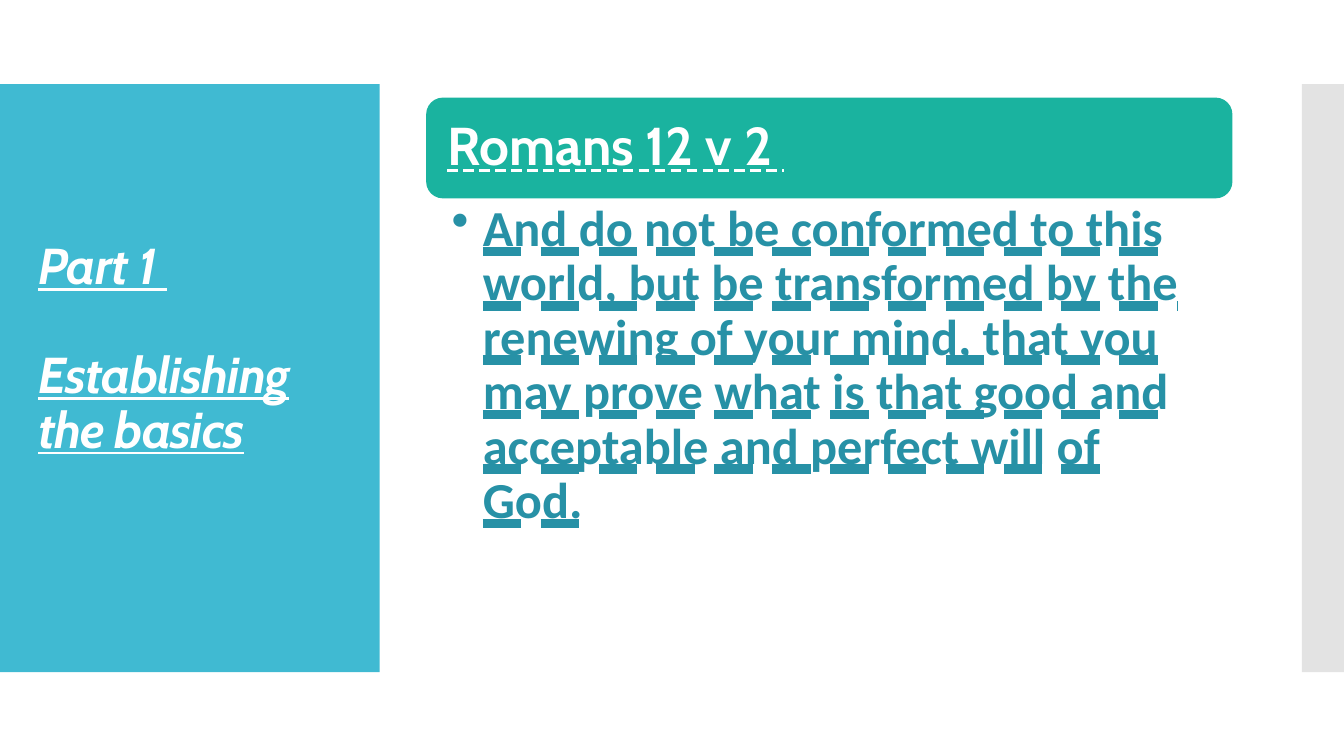
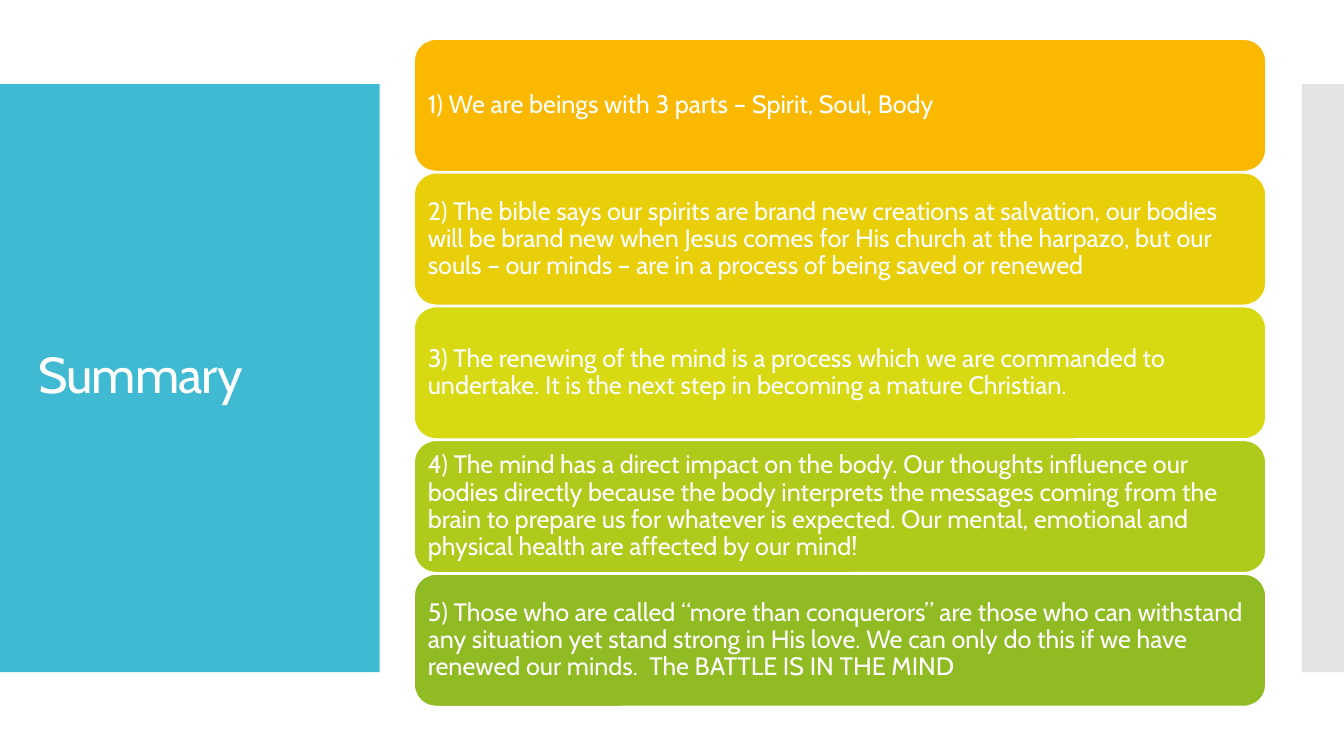
from lxml import etree
from pptx import Presentation
from pptx.dml.color import RGBColor
from pptx.enum import shapes, text
from pptx.oxml.ns import qn
from pptx.util import Cm, Pt

WHITE = RGBColor(0xFF, 0xFF, 0xFF)
SKY = RGBColor(0x40, 0xBA, 0xD2)
GREY = RGBColor(0xE3, 0xE3, 0xE3)
TEAL = RGBColor(0x1A, 0xB3, 0x9F)
DEEP_BLUE = RGBColor(0x27, 0x91, 0xA6)
AMBER = RGBColor(0xFA, 0xB9, 0x00)
GOLD = RGBColor(0xE9, 0xCE, 0x0A)
LEMON = RGBColor(0xD7, 0xD9, 0x13)
LIME = RGBColor(0xB0, 0xCA, 0x1B)
GREEN = RGBColor(0x90, 0xBB, 0x23)

SUMMARY = [
    (AMBER, "1) We are beings with 3 parts – Spirit, Soul, Body"),
    (GOLD, "2) The bible says our spirits are brand new creations at salvation, "
           "our bodies will be brand new when Jesus comes for His church at the "
           "harpazo, but our souls – our minds – are in a process of being saved "
           "or renewed"),
    (LEMON, "3) The renewing of the mind is a process which we are commanded to "
            "undertake. It is the next step in becoming a mature Christian."),
    (LIME, "4) The mind has a direct impact on the body. Our thoughts influence "
           "our bodies directly because the body interprets the messages coming "
           "from the brain to prepare us for whatever is expected. Our mental, "
           "emotional and physical health are affected by our mind!"),
    (GREEN, "5) Those who are called “more than conquerors” are those who can "
            "withstand any situation yet stand strong in His love. We can only do "
            "this if we have renewed our minds.  The BATTLE IS IN THE MIND"),
]
VERSE = ("And do not be conformed to this world, but be transformed by the renewing "
         "of your mind, that you may prove what is that good and acceptable and "
         "perfect will of God.")


class Deck:
    """Holds the shared style and the current slide."""

    base_font = {"name": "Cabin", "size": Pt(36)}
    band_top, band_height = 2.12, 14.82

    def __init__(self):
        self.deck = Presentation()
        self.deck.slide_width, self.deck.slide_height = Cm(33.87), Cm(19.05)
        self.page = None

    def add_page(self):
        self.page = self.deck.slides.add_slide(self.deck.slide_layouts[6])
        for left, width, color in ((0, 9.57, SKY), (32.81, 1.06, GREY)):
            self.panel(shapes.MSO_SHAPE.RECTANGLE,
                       (left, self.band_top, width, self.band_height), color)

    def panel(self, kind, area, color):
        shape = self.page.shapes.add_shape(kind, *map(Cm, area))
        shape.shadow.inherit = False
        shape.fill.solid()
        shape.fill.fore_color.rgb = color
        shape.line.fill.background()
        return shape

    def fill_text(self, shape, lines, color=WHITE, insets=None,
                  anchor=text.MSO_ANCHOR.MIDDLE, gap=0, spacing=None, **font):
        """Fill a shape with paragraphs; insets are left, top, right, bottom in cm."""
        frame = shape.text_frame
        frame.word_wrap = True
        frame.vertical_anchor = anchor
        if insets:
            for side, inset in zip(("left", "top", "right", "bottom"), insets):
                setattr(frame, f"margin_{side}", Cm(inset))
        for index, line in enumerate(lines):
            para = frame.add_paragraph() if index else frame.paragraphs[0]
            para.alignment = text.PP_ALIGN.LEFT
            para.line_spacing = 0.9
            para.space_before = Pt(gap if index else 0)
            span = para.add_run()
            span.text = line
            for key, value in {**self.base_font, **font}.items():
                setattr(span.font, key, value)
            span.font.color.rgb = color
            if spacing:
                span._r.get_or_add_rPr().set("spc", str(spacing))

    def title(self, lines, top=3.12, **font):
        box = self.page.shapes.add_textbox(Cm(0.71), Cm(top), Cm(8.18), Cm(12.78))
        self.fill_text(box, lines, gap=39, spacing=-60, **font)

    def card(self, area, color, line, inset, **font):
        shape = self.panel(shapes.MSO_SHAPE.ROUNDED_RECTANGLE, area, color)
        self.fill_text(shape, [line], insets=[inset] * 4, **font)
        return shape

    def bullet(self, area, line, **font):
        box = self.page.shapes.add_textbox(*map(Cm, area))
        self.fill_text(box, [line], insets=(0.64, 0.13, 0.71, 0.13),
                       anchor=text.MSO_ANCHOR.TOP, **font)
        props = box.text_frame.paragraphs[0]._p.get_or_add_pPr()
        props.set("marL", str(Cm(0.79)))
        props.set("indent", str(-Cm(0.79)))
        etree.SubElement(props, qn("a:buChar")).set("char", "•")


def verse_page(deck):
    deck.add_page()
    deck.title(["Part 1 ", "Establishing the basics"], top=2.43,
               bold=True, italic=True, underline=True)
    deck.card((10.74, 2.46, 20.32, 2.54), TEAL, "Romans 12 v 2 ", 0.41,
              size=Pt(38), bold=True, underline=text.MSO_UNDERLINE.DASH_LINE)
    deck.bullet((10.74, 4.98, 20.32, 11.58), VERSE, color=DEEP_BLUE, name="Calibri",
                bold=True, underline=text.MSO_UNDERLINE.DASH_HEAVY_LINE)


def summary_page(deck):
    top, height, pitch = 0.99, 3.33, 3.37
    deck.add_page()
    deck.title(["Summary"])
    for row, (color, line) in enumerate(SUMMARY):
        card = deck.card((10.44, top + row * pitch, 21.46, height), color, line, 0.18,
                         size=Pt(18))
        card.line.color.rgb = WHITE
        card.line.width = Pt(0.85)


def main():
    deck = Deck()
    verse_page(deck)
    summary_page(deck)
    deck.deck.save("out.pptx")


if __name__ == "__main__":
    main()
